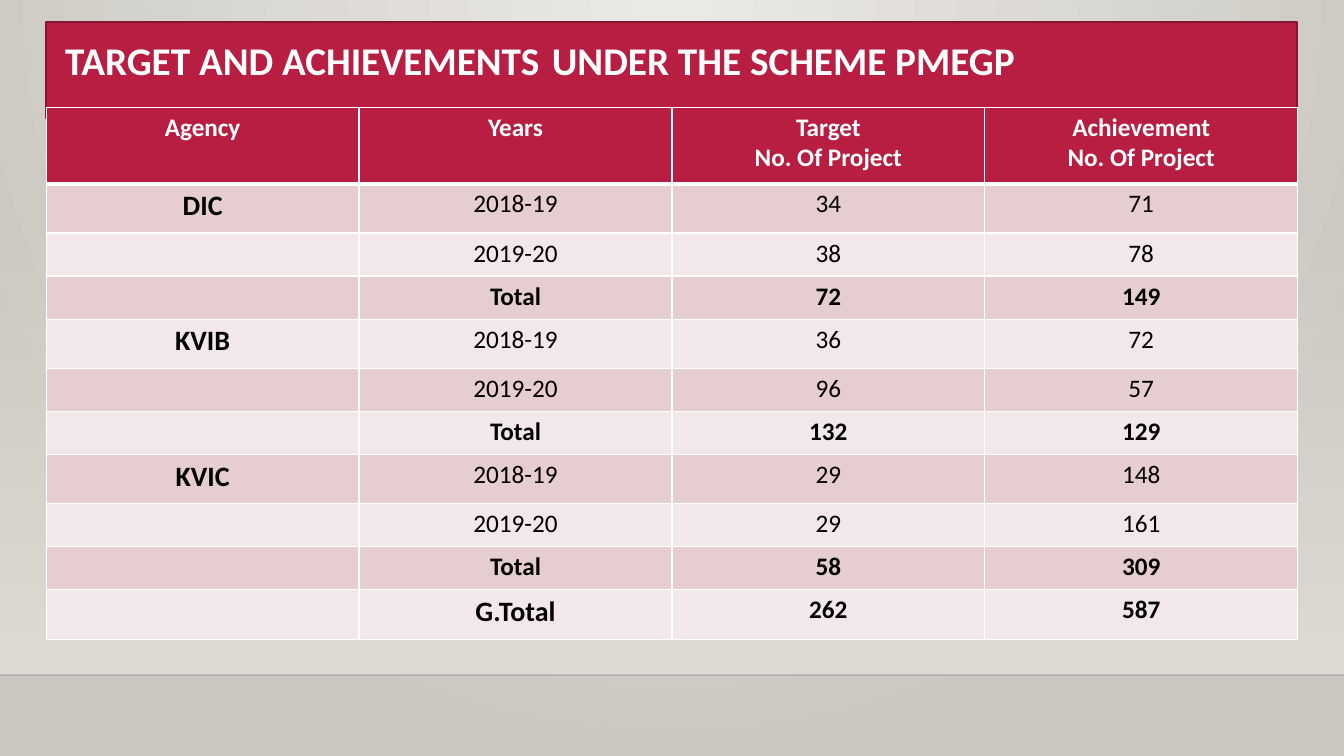
from lxml import etree
from pptx import Presentation
from pptx.dml.color import RGBColor
from pptx.enum.shapes import MSO_CONNECTOR, MSO_SHAPE
from pptx.enum.text import MSO_ANCHOR, PP_ALIGN
from pptx.oxml.ns import qn
from pptx.util import Emu, Pt

RECTANGLE = MSO_SHAPE.RECTANGLE
STRAIGHT = MSO_CONNECTOR.STRAIGHT
LEFT, CENTER = PP_ALIGN.LEFT, PP_ALIGN.CENTER
TOP = MSO_ANCHOR.TOP

CRIMSON = "B71E42"
DARK_CRIMSON = "871631"
WHITE = "FFFFFF"
BLACK = "000000"
BANDS = ("E6CDCF", "F3E8E9")
SAND = "DFDBD5"

HEADER = ("Agency", "Years", "Target\nNo. Of Project", "Achievement\nNo. Of Project")
RESULTS = (
    ("DIC", "2018-19", "34", "71"),
    ("", "2019-20", "38", "78"),
    ("", "Total", "72", "149"),
    ("KVIB", "2018-19", "36", "72"),
    ("", "2019-20", "96", "57"),
    ("", "Total", "132", "129"),
    ("KVIC", "2018-19", "29", "148"),
    ("", "2019-20", "29", "161"),
    ("", "Total", "58", "309"),
    ("", "G.Total", "262", "587"),
)
LARGE_LABELS = ("DIC", "KVIB", "KVIC", "G.Total")


def px(length):
    return Emu(length * 9525)


def color(hex_string):
    return RGBColor.from_string(hex_string)


def set_alpha(element, percent):
    rgb = next(element.iter(qn("a:srgbClr")))
    etree.SubElement(rgb, qn("a:alpha"), val=str(percent * 1000))


def set_gradient(fill, start, end):
    fill.gradient()
    for stop, shade in zip(fill.gradient_stops, (start, end)):
        stop.color.rgb = color(shade)


def write(paragraph, text, size=18, bold=False, shade=BLACK, font="Calibri", align=LEFT):
    paragraph.alignment = align
    run = paragraph.add_run()
    run.text = text
    run.font.name = font
    run.font.size = Pt(size)
    run.font.bold = bold
    run.font.color.rgb = color(shade)


class SlideBuilder:
    def __init__(self, presentation):
        self.slide = presentation.slides.add_slide(presentation.slide_layouts[6])

    def background(self, center, edge):
        set_gradient(self.slide.background.fill, center, edge)
        gradient = next(self.slide.element.iter(qn("a:gradFill")))
        gradient.remove(gradient.find(qn("a:lin")))
        circle = etree.SubElement(gradient, qn("a:path"), path="circle")
        etree.SubElement(circle, qn("a:fillToRect"), l="43000", t="0", r="43000", b="100000")

    def rectangle(self, left, top, width, height):
        shape = self.slide.shapes.add_shape(RECTANGLE, px(left), px(top), px(width), px(height))
        shape.shadow.inherit = False
        return shape

    def fading_wall(self, left, top, width, height):
        shape = self.rectangle(left, top, width, height)
        shape.line.fill.background()
        set_gradient(shape.fill, SAND, SAND)
        shape.fill.gradient_angle = 270
        set_alpha(next(shape.element.iter(qn("a:gs"))), 0)

    def line(self, left, top, right, bottom, shade, alpha):
        connector = self.slide.shapes.add_connector(
            STRAIGHT, px(left), px(top), px(right), px(bottom))
        connector.line.width = Pt(1)
        connector.line.color.rgb = color(shade)
        properties = connector.element.spPr
        set_alpha(properties, alpha)
        etree.SubElement(properties, qn("a:effectLst"))

    def title(self, left, top, width, height, parts):
        shape = self.rectangle(left, top, width, height)
        shape.fill.solid()
        shape.fill.fore_color.rgb = color(CRIMSON)
        shape.line.color.rgb = color(DARK_CRIMSON)
        shape.line.width = Pt(1.25)
        frame = shape.text_frame
        frame.word_wrap = True
        frame.vertical_anchor = TOP
        frame.margin_left = px(18)
        paragraph = frame.paragraphs[0]
        paragraph.line_spacing = 0.9
        for text, size in parts:
            write(paragraph, text, size=size, bold=True, shade=WHITE)

    def borders(self, cell, widths):
        properties = cell._tc.get_or_add_tcPr()
        for index, (side, width) in enumerate(zip("LRTB", widths)):
            border = etree.Element(qn(f"a:ln{side}"), w=str(Pt(width)))
            fill = etree.SubElement(border, qn("a:solidFill"))
            etree.SubElement(fill, qn("a:srgbClr"), val=WHITE)
            properties.insert(index, border)

    def cell(self, cell, text, fill, widths, **style):
        cell.fill.solid()
        cell.fill.fore_color.rgb = color(fill)
        self.borders(cell, widths)
        if not text:
            return
        frame = cell.text_frame
        for index, line in enumerate(text.split("\n")):
            paragraph = frame.add_paragraph() if index else frame.paragraphs[0]
            write(paragraph, line, align=CENTER, **style)

    def table(self, left, top, column_width, header, rows):
        heights = [73] + [47 if LARGE_LABELS_IN(row) else 41 for row in rows]
        table = self.slide.shapes.add_table(
            len(heights), len(header), px(left), px(top),
            px(column_width * len(header)), px(sum(heights))).table
        for column in table.columns:
            column.width = px(column_width)
        for row, height in zip(table.rows, heights):
            row.height = px(height)
        for column, text in enumerate(header):
            self.cell(table.cell(0, column), text, CRIMSON, (1, 1, 1, 3), bold=True, shade=WHITE)
        for number, row in enumerate(rows, 1):
            widths = (1, 1, 3 if number == 1 else 1, 1)
            total = "Total" in row[1]
            for column, text in enumerate(row):
                self.cell(table.cell(number, column), text, BANDS[(number - 1) % 2], widths,
                          size=20 if text in LARGE_LABELS else 18,
                          bold=total or column == 0)


def LARGE_LABELS_IN(row):
    return any(text in LARGE_LABELS for text in row)


def main():
    presentation = Presentation()
    presentation.slide_width = px(1280)
    presentation.slide_height = px(720)
    builder = SlideBuilder(presentation)
    builder.background("ECEAE7", "CAC7C1")
    builder.fading_wall(0, 212, 1280, 431)
    builder.line(0, 643, 1280, 643, BLACK, 20)
    builder.title(44, 21, 1191, 92, (
        ("TARGET AND ACHIEVEMENTS", 28), (" ", 40), ("UNDER THE SCHEME PMEGP", 28)))
    builder.table(44, 102, 298, HEADER, RESULTS)
    presentation.save("out.pptx")


if __name__ == "__main__":
    main()
